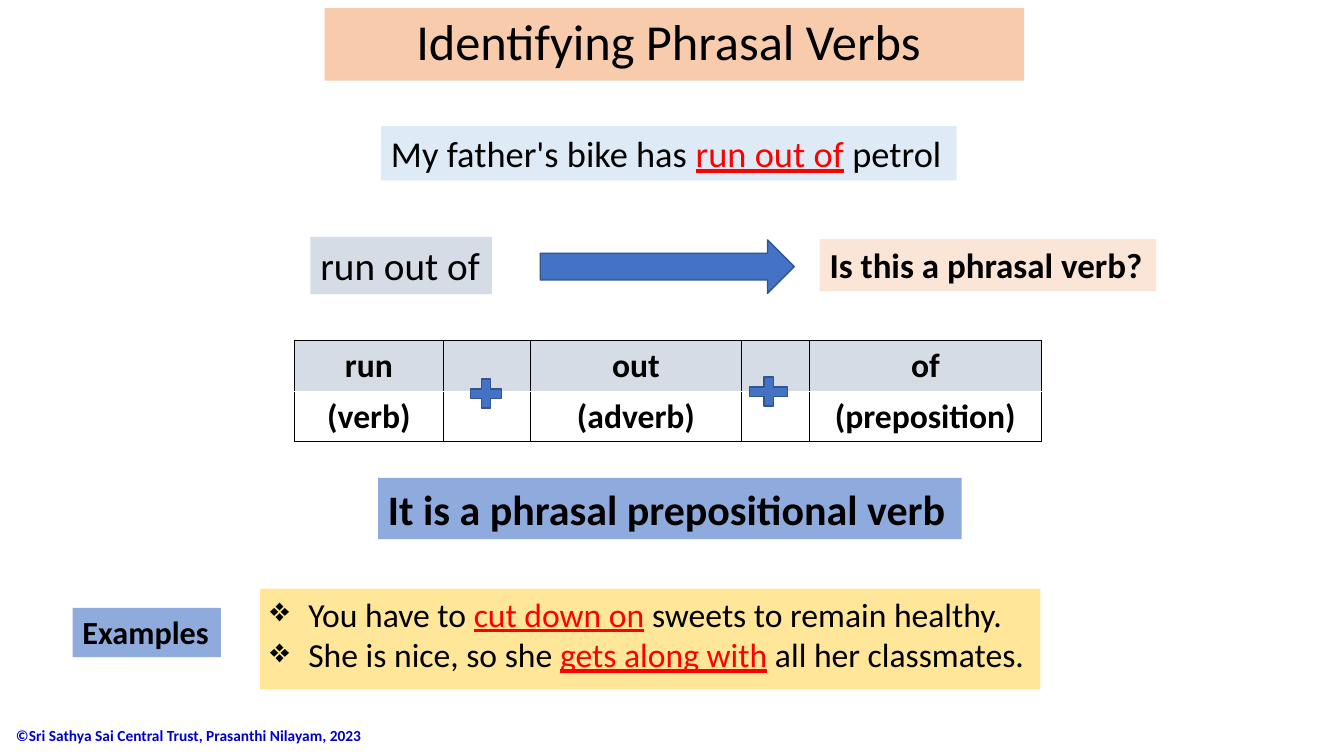
from dataclasses import dataclass

from lxml.etree import SubElement
from pptx import Presentation
from pptx.dml.color import RGBColor
from pptx.enum.shapes import MSO_SHAPE
from pptx.enum.text import MSO_ANCHOR, PP_ALIGN
from pptx.oxml import parse_xml
from pptx.oxml.ns import qn
from pptx.util import Inches, Pt

WIDE, HIGH = Inches(13.33), Inches(7.5)
FONT = "Calibri"
NS = "http://schemas.openxmlformats.org/drawingml/2006/main"
HUES = {
    "black": "000000", "red": "FF0000", "navy": "0000CC", "peach": "F8CBAD",
    "blush": "FBE5D6", "sky": "DEEBF7", "grey": "D6DCE5", "blue": "4472C4",
    "edge": "325491", "steel": "8FAADC", "gold": "FFE699",
}


@dataclass(frozen=True)
class Area:
    """Left, top, width and height in percent of the slide."""
    left: float
    top: float
    wide: float
    high: float

    def frame(self) -> tuple[int, int, int, int]:
        return (across(self.left), down(self.top),
                across(self.wide), down(self.high))


@dataclass(frozen=True)
class Label:
    area: Area
    lines: tuple[str, ...]
    size: float
    fill: str | None = None
    hue: str = "black"
    bold: bool = False
    wrap: bool = False
    mid: bool = False
    align: PP_ALIGN = PP_ALIGN.LEFT
    pitch: float | None = None
    mark: str = ""


@dataclass(frozen=True)
class Sign:
    area: Area
    kind: MSO_SHAPE


LABELS = (
    Label(Area(0.45, 94.53, 28.6, 5.47),
          ("©Sri Sathya Sai Central Trust, Prasanthi Nilayam, 2023",),
          11, hue="navy", bold=True, mid=True),
    Label(Area(24.15, 1.07, 52.05, 9.6), ("Identifying Phrasal Verbs ",), 36, "peach",
          wrap=True, mid=True, align=PP_ALIGN.CENTER, pitch=0.9),
    Label(Area(60.98, 31.6, 25.05, 6.93), ("Is this a phrasal verb?",), 25, "blush",
          bold=True),
    Label(Area(28.35, 16.67, 42.83, 7.2), ("My father's bike has _run out of_ petrol",),
          26, "sky"),
    Label(Area(23.1, 31.33, 13.5, 7.6), ("run out of",), 28, "grey"),
    Label(Area(28.13, 63.2, 43.43, 8.13), ("It is a phrasal prepositional verb",), 30,
          "steel", bold=True, mid=True),
    Label(Area(5.4, 80.4, 11.03, 6.53), ("Examples",), 23, "steel", bold=True),
    Label(Area(19.35, 77.87, 58.05, 13.33),
          ("You have to _cut down on_ sweets to remain healthy.",
           "She is nice, so she _gets along with_ all her classmates."),
          24, "gold", wrap=True, mark="❖"),
)
SIGNS = (
    Sign(Area(40.2, 31.73, 18.9, 7.07), MSO_SHAPE.RIGHT_ARROW),
    Sign(Area(34.58, 49.47, 3.15, 5.2), MSO_SHAPE.MATH_PLUS),
    Sign(Area(55.28, 49.2, 3.83, 5.2), MSO_SHAPE.MATH_PLUS),
)
PARTS = (("run", "", "out", "", "of"),
         ("(verb)", "", "(adverb)", "", "(preposition)"))
COLS = (11.1, 6.45, 15.75, 5.03, 17.25)
ROW = 6.67


def across(share: float) -> int:
    return round(WIDE * share / 100)


def down(share: float) -> int:
    return round(HIGH * share / 100)


def tint(name: str) -> RGBColor:
    return RGBColor.from_string(HUES[name])


def paint(fill, name: str) -> None:
    fill.solid()
    fill.fore_color.rgb = tint(name)


def write(para, text: str, *, size: float, hue: str = "black", bold: bool = False,
          align: PP_ALIGN = PP_ALIGN.LEFT, pitch: float | None = None,
          mark: str = "") -> None:
    """Fill a paragraph; words between underscores turn red and underlined."""
    if mark:
        props = para._p.get_or_add_pPr()
        props.set("marL", str(Inches(0.38)))
        props.set("indent", str(-Inches(0.38)))
        SubElement(props, qn("a:buChar")).set("char", mark)
    para.alignment = align
    if pitch:
        para.line_spacing = pitch
    for turn, piece in enumerate(text.split("_")):
        if not piece:
            continue
        run = para.add_run()
        run.text = piece
        font = run.font
        font.name, font.size, font.bold = FONT, Pt(size), bold
        font.underline = turn % 2 == 1
        font.color.rgb = tint("red" if turn % 2 else hue)


def add_label(slide, label: Label) -> None:
    box = slide.shapes.add_textbox(*label.area.frame())
    if label.fill:
        paint(box.fill, label.fill)
    body = box.text_frame
    body.word_wrap = label.wrap
    body.vertical_anchor = MSO_ANCHOR.MIDDLE if label.mid else MSO_ANCHOR.TOP
    for turn, line in enumerate(label.lines):
        para = body.add_paragraph() if turn else body.paragraphs[0]
        write(para, line, size=label.size, hue=label.hue, bold=label.bold,
              align=label.align, pitch=label.pitch, mark=label.mark)


def add_sign(slide, sign: Sign) -> None:
    shape = slide.shapes.add_shape(sign.kind, *sign.area.frame())
    shape.shadow.inherit = False
    paint(shape.fill, "blue")
    shape.line.color.rgb = tint("edge")
    shape.line.width = Pt(1)


def rule(cell, sides: str) -> None:
    """Draw black borders on the named sides, given in the order L, R, T, B."""
    props = cell._tc.get_or_add_tcPr()
    for place, side in enumerate(sides):
        props.insert(place, parse_xml(
            f'<a:ln{side} xmlns:a="{NS}" w="{Pt(1)}"><a:solidFill>'
            f'<a:srgbClr val="{HUES["black"]}"/></a:solidFill></a:ln{side}>'))


def add_parts(slide) -> None:
    area = Area(21.9, 45.07, sum(COLS), ROW * len(PARTS))
    table = slide.shapes.add_table(len(PARTS), len(COLS), *area.frame()).table
    table.first_row = table.horz_banding = False
    for col, share in zip(table.columns, COLS):
        col.width = across(share)
    for i, words in enumerate(PARTS):
        table.rows[i].height = down(ROW)
        for j, word in enumerate(words):
            cell = table.cell(i, j)
            if i == 0:
                paint(cell.fill, "grey")
            else:
                cell.fill.background()
            rule(cell, "LRB" if i else "LRT")
            write(cell.text_frame.paragraphs[0], word, size=24, bold=True,
                  align=PP_ALIGN.CENTER)


def main() -> None:
    deck = Presentation()
    deck.slide_width, deck.slide_height = WIDE, HIGH
    slide = deck.slides.add_slide(deck.slide_layouts[6])
    for label in LABELS:
        add_label(slide, label)
    add_parts(slide)
    for sign in SIGNS:
        add_sign(slide, sign)
    deck.save("out.pptx")


if __name__ == "__main__":
    main()
